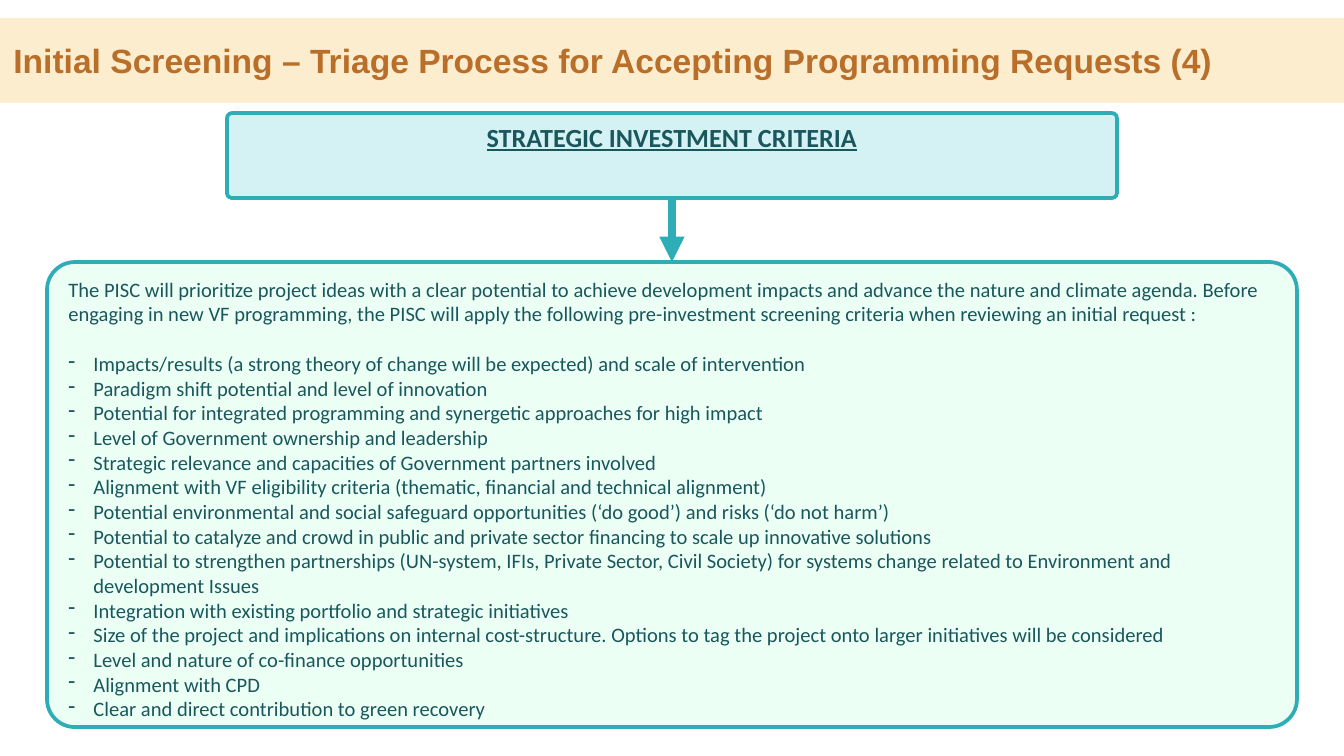
from lxml import etree
from pptx import Presentation
from pptx.dml import color
from pptx.enum import shapes, text
from pptx.oxml import ns
from pptx import util as u

PX = 6804
TEAL, DARK = "2EADB7", "19575C"
TITLE = "Initial Screening – Triage Process for Accepting Programming Requests (4)"
HEADING = "STRATEGIC INVESTMENT CRITERIA"
INTRO = (
    "The PISC will prioritize project ideas with a clear potential to achieve "
    "development impacts and advance the nature and climate agenda. Before "
    "engaging in new VF programming, the PISC will apply the following "
    "pre-investment screening criteria when reviewing an initial request :"
)
CRITERIA = [
    "Impacts/results (a strong theory of change will be expected) and scale of intervention",
    "Paradigm shift potential and level of innovation",
    "Potential for integrated programming and synergetic approaches for high impact",
    "Level of Government ownership and leadership",
    "Strategic relevance and capacities of Government partners involved",
    "Alignment with VF eligibility criteria (thematic, financial and technical alignment)",
    "Potential environmental and social safeguard opportunities (‘do good’) and risks (‘do not harm’)",
    "Potential to catalyze and crowd in public and private sector financing to scale up innovative solutions",
    "Potential to strengthen partnerships (UN-system, IFIs, Private Sector, Civil Society) "
    "for systems change related to Environment and development Issues",
    "Integration with existing portfolio and strategic initiatives",
    "Size of the project and implications on internal cost-structure. "
    "Options to tag the project onto larger initiatives will be considered",
    "Level and nature of co-finance opportunities",
    "Alignment with CPD",
    "Clear and direct contribution to green recovery",
]


def px(length):
    return u.Emu(length * PX)


def paint(target, shade):
    target.solid()
    target.fore_color.rgb = color.RGBColor.from_string(shade)


def set_font(para, name, size, shade, bold=False):
    para.font.name = name
    para.font.size = u.Pt(size)
    para.font.bold = bold
    paint(para.font.fill, shade)


def add_bullet(para, indent):
    props = para._p.get_or_add_pPr()
    props.set("marL", str(px(indent)))
    props.set("indent", str(px(-indent)))
    etree.SubElement(props, ns.qn("a:buChar")).set("char", "-")


def add_title(page, left, top, width, height):
    title = page.shapes.title
    title.left, title.top, title.width, title.height = map(px, (left, top, width, height))
    paint(title.fill, "FCEDCF")
    frame = title.text_frame
    frame.text = TITLE
    frame.word_wrap = True
    frame.auto_size = text.MSO_AUTO_SIZE.NONE
    frame.vertical_anchor = text.MSO_ANCHOR.MIDDLE
    para = frame.paragraphs[0]
    para.alignment = text.PP_ALIGN.LEFT
    set_font(para, "Arial", 18, "B96E29", bold=True)


def add_panel(page, left, top, width, height, shade):
    panel = page.shapes.add_shape(
        shapes.MSO_SHAPE.ROUNDED_RECTANGLE, *map(px, (left, top, width, height)))
    panel.shadow.inherit = False
    panel.adjustments[0] = 0.06
    paint(panel.fill, shade)
    paint(panel.line.fill, TEAL)
    panel.line.width = u.Pt(2)
    panel.text_frame.word_wrap = True
    panel.text_frame.vertical_anchor = text.MSO_ANCHOR.TOP
    return panel


def add_heading(page, left, top, width, height):
    panel = add_panel(page, left, top, width, height, "D4F1F3")
    para = panel.text_frame.paragraphs[0]
    para.text = HEADING
    para.alignment = text.PP_ALIGN.CENTER
    set_font(para, "Calibri", 14, DARK, bold=True)
    para.font.underline = True
    return panel


def add_criteria(page, left, top, width, height):
    panel = add_panel(page, left, top, width, height, "EBFFF5")
    frame = panel.text_frame
    frame.text = "\n".join([INTRO, *CRITERIA])
    for para in frame.paragraphs:
        para.alignment = text.PP_ALIGN.LEFT
        set_font(para, "Calibri", 11, DARK)
    intro, *bullets = frame.paragraphs
    intro.space_after = u.Pt(13.4)
    for para in bullets:
        add_bullet(para, 25)
    return panel


def add_arrow(page, upper, lower):
    arrow = page.shapes.add_connector(shapes.MSO_CONNECTOR.STRAIGHT, 0, 0, 0, 0)
    arrow.begin_connect(upper, 2)
    arrow.end_connect(lower, 0)
    paint(arrow.line.fill, TEAL)
    arrow.line.width = u.Pt(4.5)
    etree.SubElement(arrow.line._get_or_add_ln(), ns.qn("a:tailEnd")).set("type", "triangle")
    etree.SubElement(arrow._element.spPr, ns.qn("a:effectLst"))


def main():
    deck = Presentation()
    deck.slide_width, deck.slide_height = px(1344), px(756)
    page = deck.slides.add_slide(deck.slide_layouts[5])
    add_title(page, 0, 18, 1344, 85)
    criteria = add_criteria(page, 47, 262, 1250, 465)
    heading = add_heading(page, 227, 113, 890, 85)
    add_arrow(page, heading, criteria)
    deck.save("out.pptx")


if __name__ == "__main__":
    main()
